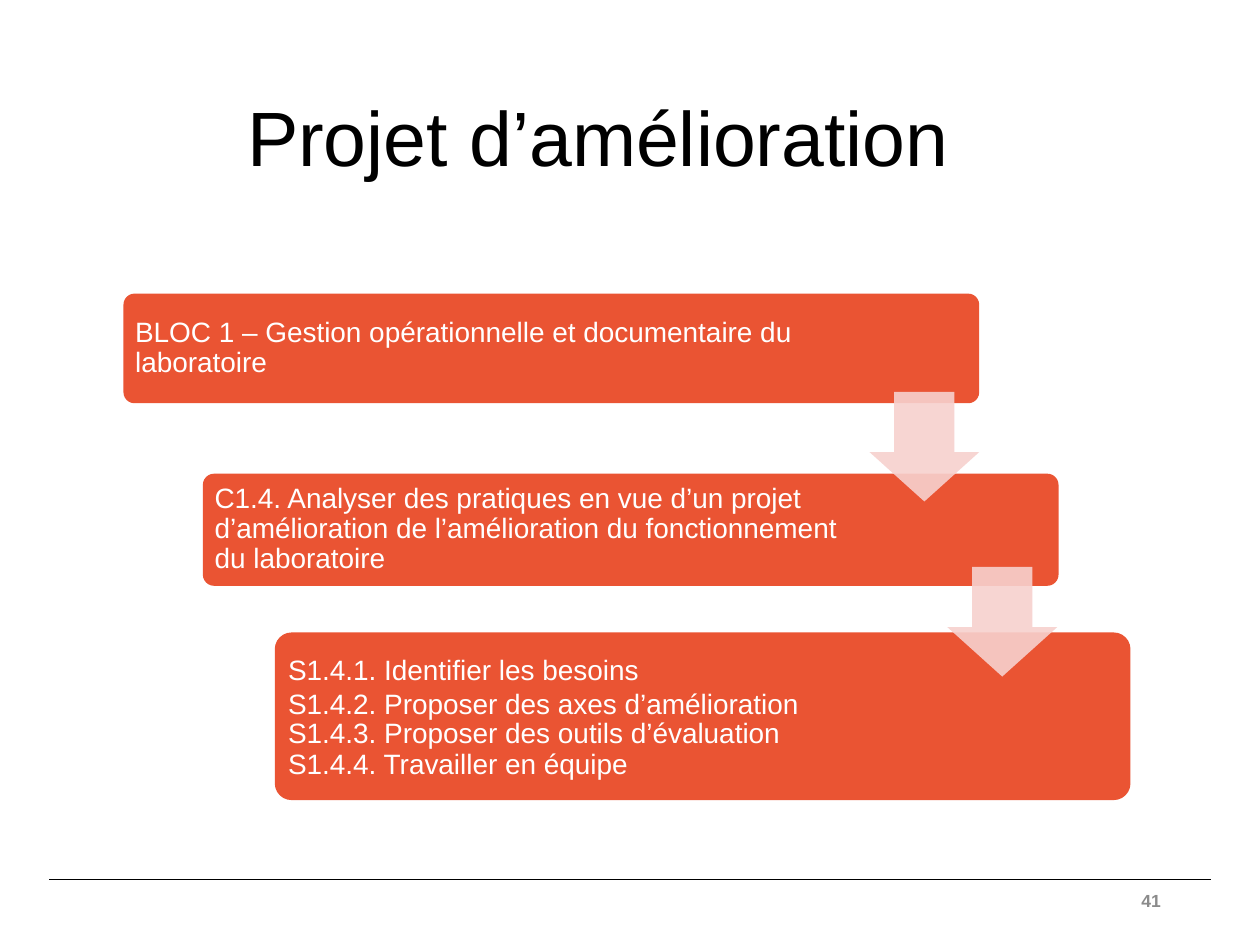
from dataclasses import dataclass

from lxml.etree import SubElement
from pptx import Presentation
from pptx.dml.color import RGBColor
from pptx.enum.shapes import MSO_CONNECTOR, MSO_SHAPE
from pptx.enum.text import MSO_ANCHOR, MSO_AUTO_SIZE, PP_ALIGN
from pptx.oxml.ns import qn
from pptx.util import Cm, Pt


@dataclass(frozen=True)
class Theme:
    font: str = "Arial"
    ink: RGBColor = RGBColor(0x00, 0x00, 0x00)
    block: RGBColor = RGBColor(0xEA, 0x54, 0x33)
    block_text: RGBColor = RGBColor(0xFF, 0xFF, 0xFF)
    arrow: RGBColor = RGBColor(0xF7, 0xD1, 0xCE)
    muted: RGBColor = RGBColor(0x8B, 0x8B, 0x8B)
    title_size: Pt = Pt(44)
    block_size: Pt = Pt(16)
    number_size: Pt = Pt(10)
    rule_width: Pt = Pt(0.8)


class SlideBuilder:
    """Draws the elements of one slide in a shared style."""

    def __init__(self, slide, theme):
        self.slide = slide
        self.theme = theme

    def add_text(self, paragraph, text, size, color, bold=False, spacing=1.0, align=PP_ALIGN.LEFT):
        paragraph.alignment = align
        paragraph.line_spacing = spacing
        paragraph.space_before = Pt(0)
        run = paragraph.add_run()
        run.text = text
        run.font.name = self.theme.font
        run.font.size = size
        run.font.bold = bold
        run.font.color.rgb = color

    def frame(self, shape, left=0, top=0, right=0, bottom=0):
        text_frame = shape.text_frame
        text_frame.word_wrap = True
        text_frame.auto_size = MSO_AUTO_SIZE.NONE
        text_frame.vertical_anchor = MSO_ANCHOR.MIDDLE
        text_frame.margin_left, text_frame.margin_top = Cm(left), Cm(top)
        text_frame.margin_right, text_frame.margin_bottom = Cm(right), Cm(bottom)
        return text_frame

    def title(self, text, left, top, width, height):
        heading = self.slide.shapes.title
        heading.left, heading.top = Cm(left), Cm(top)
        heading.width, heading.height = Cm(width), Cm(height)
        self.add_text(self.frame(heading).paragraphs[0], text,
                      self.theme.title_size, self.theme.ink, spacing=0.9)

    def filled(self, preset, color, left, top, width, height, *adjustments):
        shape = self.slide.shapes.add_shape(preset, Cm(left), Cm(top), Cm(width), Cm(height))
        shape.shadow.inherit = False
        shape.fill.solid()
        shape.fill.fore_color.rgb = color
        shape.line.fill.background()
        for index, value in enumerate(adjustments):
            shape.adjustments[index] = value
        return shape

    def block(self, lines, left, top, width, height, text_gap):
        step = self.filled(MSO_SHAPE.ROUNDED_RECTANGLE, self.theme.block,
                           left, top, width, height, 0.1)
        text_frame = self.frame(step, 0.17, 0.17, text_gap, 0.17)
        for index, (text, spacing) in enumerate(lines):
            paragraph = text_frame.add_paragraph() if index else text_frame.paragraphs[0]
            self.add_text(paragraph, text, self.theme.block_size, self.theme.block_text,
                          spacing=spacing)

    def arrow(self, left, top, side):
        pointer = self.filled(MSO_SHAPE.DOWN_ARROW, self.theme.arrow,
                              left, top, side, side, 0.55, 0.45)
        tint = pointer._element.spPr.find(qn("a:solidFill"))[0]
        SubElement(tint, qn("a:alpha")).set("val", "90000")

    def rule(self, left, right, y):
        footer_rule = self.slide.shapes.add_connector(
            MSO_CONNECTOR.STRAIGHT, Cm(left), Cm(y), Cm(right), Cm(y))
        footer_rule.line.color.rgb = self.theme.ink
        footer_rule.line.width = self.theme.rule_width
        SubElement(footer_rule._element.spPr, qn("a:effectLst"))

    def page_number(self, text, left, top, width, height):
        number = self.slide.shapes.add_textbox(Cm(left), Cm(top), Cm(width), Cm(height))
        self.add_text(self.frame(number, 0.25, 0.13, 0.25, 0.13).paragraphs[0], text,
                      self.theme.number_size, self.theme.muted, bold=True, align=PP_ALIGN.RIGHT)


def main():
    deck = Presentation()
    deck.slide_width, deck.slide_height = Cm(25.4), Cm(19.05)
    builder = SlideBuilder(deck.slides.add_slide(deck.slide_layouts[5]), Theme())

    builder.rule(0.99, 24.41, 17.73)
    builder.title("Projet d’amélioration", 4.98, 1.27, 19.41, 3.18)

    block_width = 17.25
    unit = [("BLOC 1 – Gestion opérationnelle et documentaire du laboratoire", 0.9)]
    skill = [("C1.4. Analyser des pratiques en vue d’un projet d’amélioration de "
              "l’amélioration du fonctionnement du laboratoire", 0.9)]
    tasks = [("S1.4.1. Identifier les besoins", 1.0),
             ("S1.4.2. Proposer des axes d’amélioration", 1.0),
             ("S1.4.3. Proposer des outils d’évaluation", 0.9),
             ("S1.4.4. Travailler en équipe", 0.9)]
    for lines, left, top, height, text_gap in (
        (unit, 2.49, 5.92, 2.21, 3.6),
        (skill, 4.09, 9.55, 2.26, 3.89),
        (tasks, 5.54, 12.75, 3.38, 3.89),
    ):
        builder.block(lines, left, top, block_width, height, text_gap)

    for left, top in ((17.53, 7.9), (19.1, 11.43)):
        builder.arrow(left, top, 2.21)

    builder.page_number("41", 17.93, 17.65, 5.72, 1.02)
    deck.save("out.pptx")


if __name__ == "__main__":
    main()
